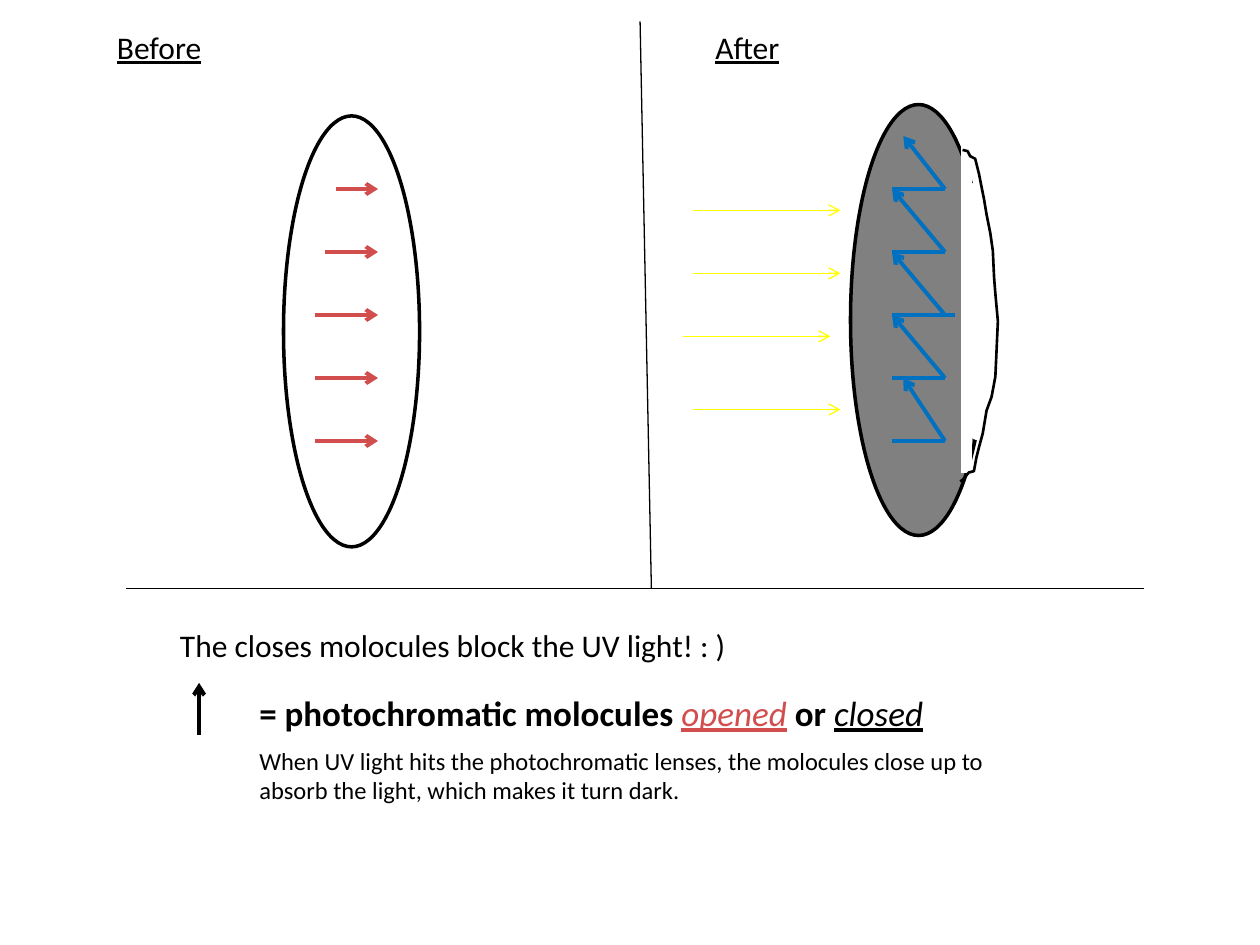
"""Builds a slide on how photochromatic lenses darken under UV light."""
import dataclasses
import typing

import lxml.etree
import pptx
import pptx.dml.color
import pptx.enum.shapes
import pptx.enum.text
import pptx.oxml.ns
import pptx.util

Inches = pptx.util.Inches
Point = tuple[float, float]


@dataclasses.dataclass(frozen=True)
class Theme:
    font: str = "Calibri"
    black: str = "000000"
    white: str = "FFFFFF"
    dark_lens: str = "808080"
    opened: str = "D24E4E"
    closed: str = "0070C0"
    uv: str = "FFFF00"
    title: int = 20
    label: int = 18
    body: int = 14
    thin: float = 0.75
    edge: float = 1.5
    lens: float = 2
    molecule: float = 2.25
    mask: float = 6


THEME = Theme()


@dataclasses.dataclass(frozen=True)
class Line:
    start: Point
    end: Point
    color: str = THEME.black
    width: float = THEME.thin
    arrow: bool = False


@dataclasses.dataclass(frozen=True)
class Run:
    text: str
    color: str = THEME.black
    bold: bool = False
    italic: bool = False
    underline: bool = False


@dataclasses.dataclass(frozen=True)
class Label:
    box: tuple[float, float, float, float]
    size: int
    runs: tuple[Run, ...]
    grow: bool = True
    bottom: bool = False


@dataclasses.dataclass(frozen=True)
class Lens:
    left: float
    top: float
    fill: str


def rgb(color: str) -> pptx.dml.color.RGBColor:
    return pptx.dml.color.RGBColor.from_string(color)


def set_line(line: typing.Any, color: str, width: float) -> None:
    line.color.rgb = rgb(color)
    line.width = pptx.util.Pt(width)


def draw_line(s: typing.Any, spec_line: Line) -> None:
    ends = [Inches(v) for v in spec_line.start + spec_line.end]
    c = s.shapes.add_connector(pptx.enum.shapes.MSO_CONNECTOR.STRAIGHT, *ends)
    set_line(c.line, spec_line.color, spec_line.width)
    qn = pptx.oxml.ns.qn
    sp_pr = c._element.spPr
    if spec_line.arrow:
        lxml.etree.SubElement(sp_pr.find(qn("a:ln")), qn("a:tailEnd"), type="arrow")
    lxml.etree.SubElement(sp_pr, qn("a:effectLst"))


def draw_lens(s: typing.Any, lens: Lens) -> None:
    sp = s.shapes.add_shape(
        pptx.enum.shapes.MSO_SHAPE.OVAL,
        Inches(lens.left), Inches(lens.top), Inches(1.08), Inches(3.42),
    )
    sp.shadow.inherit = False
    sp.fill.solid()
    sp.fill.fore_color.rgb = rgb(lens.fill)
    set_line(sp.line, THEME.black, THEME.lens)


def draw_outline(s: typing.Any, points: list[Point], color: str, width: float, filled: bool) -> None:
    corners = [(Inches(x), Inches(y)) for x, y in points]
    builder = s.shapes.build_freeform(*corners[0])
    builder.add_line_segments(corners[1:], close=filled)
    sp = builder.convert_to_shape()
    sp.shadow.inherit = False
    if filled:
        sp.fill.solid()
        sp.fill.fore_color.rgb = rgb(color)
    else:
        sp.fill.background()
    set_line(sp.line, color, width)


def draw_label(s: typing.Any, label: Label) -> None:
    tf = s.shapes.add_textbox(*map(Inches, label.box)).text_frame
    tf.word_wrap = True
    if label.grow:
        tf.auto_size = pptx.enum.text.MSO_AUTO_SIZE.SHAPE_TO_FIT_TEXT
    if label.bottom:
        tf.vertical_anchor = pptx.enum.text.MSO_ANCHOR.BOTTOM
    p = tf.paragraphs[0]
    for run in label.runs:
        r = p.add_run()
        r.text = run.text
        r.font.name = THEME.font
        r.font.size = pptx.util.Pt(label.size)
        r.font.color.rgb = rgb(run.color)
        r.font.bold = run.bold
        r.font.italic = run.italic
        r.font.underline = run.underline


LENSES = [Lens(2.25, 0.92, THEME.white), Lens(6.75, 0.83, THEME.dark_lens)]
ROWS = [1.5 + 0.5 * i for i in range(5)]
OPEN_STARTS = [2.67, 2.58, 2.5, 2.5, 2.5]
BAR_ENDS = [7.5, 7.5, 7.58, 7.5, 7.5]
CLOSED_TIPS = [(7.17, 1.08), (7.08, 1.5), (7.08, 2), (7.08, 2.5), (7.17, 3)]
UV_RAYS = [(5.5, 1.67), (5.5, 2.17), (5.42, 2.67), (5.5, 3.25)]

DIVIDERS = [Line((5.08, 0.17), (5.17, 4.67)), Line((1, 4.67), (9.08, 4.67))]
MOLECULES = [
    *(Line((x, y), (3, y), THEME.opened, THEME.molecule, True) for x, y in zip(OPEN_STARTS, ROWS)),
    Line((1.58, 5.83), (1.58, 5.42), THEME.black, THEME.molecule, True),
    *(Line((7.08, y), (x, y), THEME.closed, THEME.molecule) for x, y in zip(BAR_ENDS, ROWS)),
    *(Line((7.5, y), tip, THEME.closed, THEME.molecule, True) for y, tip in zip(ROWS, CLOSED_TIPS)),
]
MASKS = [
    Line((7.67, 1.17), (7.67, 3.75), THEME.white, THEME.mask),
    Line((7.75, 1.67), (7.75, 3.17), THEME.white, THEME.mask),
]
RAYS = [Line((x, y), (x + 1.17, y), THEME.uv, THEME.thin, True) for x, y in UV_RAYS]

MASK_AREA = [
    (7.68, 1.48), (7.75, 1.52), (7.79, 1.7), (7.82, 1.9), (7.86, 2.15), (7.89, 2.45),
    (7.88, 2.85), (7.82, 3.06), (7.77, 3.3), (7.75, 3.45), (7.68, 3.4),
]
LENS_EDGE = [
    (7.64, 1.19), (7.68, 1.2), (7.7, 1.24), (7.74, 1.26), (7.77, 1.38), (7.79, 1.48),
    (7.81, 1.58), (7.83, 1.7), (7.86, 1.85), (7.88, 1.99), (7.89, 2.2), (7.9, 2.33),
    (7.92, 2.55), (7.9, 2.99), (7.87, 3.15), (7.83, 3.26), (7.8, 3.44), (7.77, 3.55),
    (7.75, 3.63), (7.73, 3.74), (7.69, 3.75), (7.64, 3.81), (7.62, 3.82),
]
LABELS = [
    Label((1.96, 5.25, 6, 0.62), THEME.title, (
        Run("= photochromatic molocules ", bold=True),
        Run("opened", THEME.opened, italic=True, underline=True),
        Run(" or ", bold=True),
        Run("closed", italic=True, underline=True),
    ), grow=False, bottom=True),
    Label((1.96, 5.87, 6, 0.88), THEME.body, (
        Run("When UV light hits the photochromatic lenses, the molocules close up to "
            "absorb the light, which makes it turn dark."),
    ), grow=False),
    Label((0.83, 0.17, 0.92, 0.4), THEME.label, (Run("Before", underline=True),)),
    Label((5.58, 0.17, 1.33, 0.4), THEME.label, (Run("After", underline=True),)),
    Label((1.33, 4.92, 4.58, 0.4), THEME.label,
          (Run("The closes molocules block the UV light! : )"),)),
]


def main() -> None:
    prs = pptx.Presentation()
    prs.slide_width, prs.slide_height = Inches(10), Inches(7.5)
    s = prs.slides.add_slide(prs.slide_layouts[6])
    for label in LABELS:
        draw_label(s, label)
    for lens in LENSES:
        draw_lens(s, lens)
    for line in DIVIDERS + MOLECULES + MASKS:
        draw_line(s, line)
    draw_outline(s, MASK_AREA, THEME.white, THEME.mask, filled=True)
    draw_outline(s, LENS_EDGE, THEME.black, THEME.edge, filled=False)
    for ray in RAYS:
        draw_line(s, ray)
    prs.save("out.pptx")


if __name__ == "__main__":
    main()
